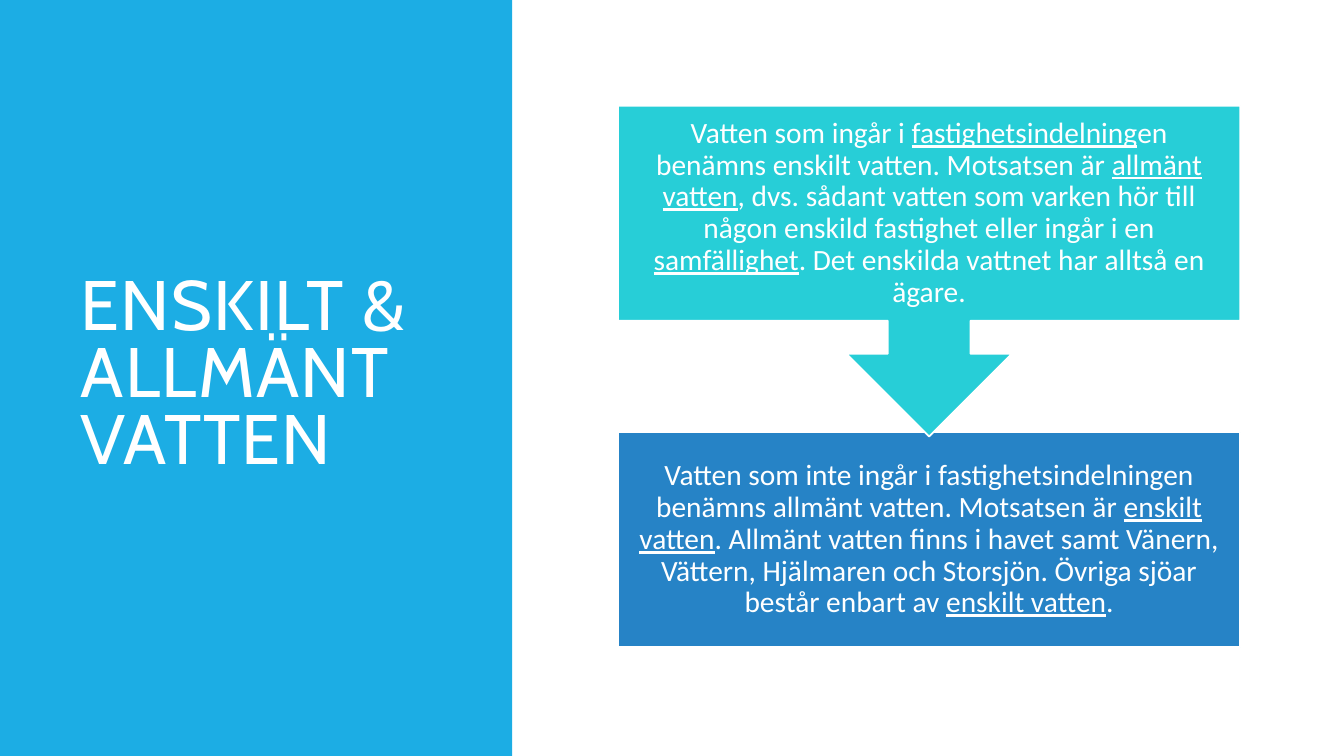
from dataclasses import dataclass

from pptx import Presentation
from pptx.dml.color import RGBColor
from pptx.enum.shapes import MSO_SHAPE
from pptx.enum.text import MSO_ANCHOR, MSO_AUTO_SIZE, PP_ALIGN
from pptx.oxml.ns import qn
from pptx.util import Inches, Pt

RECT = MSO_SHAPE.RECTANGLE
ARROW_CALLOUT = MSO_SHAPE.UP_ARROW_CALLOUT
MIDDLE = MSO_ANCHOR.MIDDLE
LEFT, CENTER = PP_ALIGN.LEFT, PP_ALIGN.CENTER
NO_AUTOFIT = MSO_AUTO_SIZE.NONE
TITLE_ONLY = 5


@dataclass(frozen=True)
class Theme:
    panel: str = "1CADE4"
    private: str = "27CED7"
    public: str = "2683C6"
    white: str = "FFFFFF"
    title_font: str = "Cabin"
    body_font: str = "Calibri"
    title_size: float = 50
    body_size: float = 21
    outline: float = 1.25


class SlideBuilder:
    def __init__(self, slide, theme):
        self.s = slide
        self.theme = theme

    def shape(self, kind, box, fill, outlined=True, rotation=0):
        sp = self.s.shapes.add_shape(kind, *map(Inches, box))
        sp.shadow.inherit = False
        sp.rotation = rotation
        sp.fill.solid()
        sp.fill.fore_color.rgb = RGBColor.from_string(fill)
        if outlined:
            sp.line.color.rgb = RGBColor.from_string(self.theme.white)
            sp.line.width = Pt(self.theme.outline)
        else:
            sp.line.fill.background()
        return sp

    def run(self, p, text, font, size, underline=False):
        r = p.add_run()
        r.text = text
        r.font.name = font
        r.font.size = Pt(size)
        r.font.color.rgb = RGBColor.from_string(self.theme.white)
        r.font.underline = underline

    def frame(self, sp, align, line_spacing):
        """Format the text frame and return its first paragraph."""
        tf = sp.text_frame
        tf.word_wrap = True
        tf.auto_size = NO_AUTOFIT
        tf.vertical_anchor = MIDDLE
        p = tf.paragraphs[0]
        p.alignment = align
        p.line_spacing = line_spacing
        return p

    def title(self, box, text):
        sp = self.s.shapes.title
        sp.left, sp.top, sp.width, sp.height = map(Inches, box)
        p = self.frame(sp, LEFT, 0.8)
        self.run(p, text, self.theme.title_font, self.theme.title_size)
        for r_pr in sp.element.iter(qn("a:rPr")):
            r_pr.set("spc", "100")
        return sp

    def text(self, box, runs, inset=0.16):
        """Add centred text; runs alternate between plain and underlined."""
        sp = self.s.shapes.add_textbox(*map(Inches, box))
        p = self.frame(sp, CENTER, 0.9)
        tf = sp.text_frame
        tf.margin_left = tf.margin_right = Inches(inset)
        tf.margin_top = tf.margin_bottom = Inches(inset)
        for i, text in enumerate(runs):
            self.run(p, text, self.theme.body_font, self.theme.body_size,
                     underline=i % 2 == 1)


PRIVATE_WATER = [
    "Vatten som ingår i ", "fastighetsindelning",
    "en benämns enskilt vatten. Motsatsen är ", "allmänt vatten",
    ", dvs. sådant vatten som varken hör till någon enskild fastighet "
    "eller ingår i en ", "samfällighet",
    ". Det enskilda vattnet har alltså en ägare.",
]
PUBLIC_WATER = [
    "Vatten som inte ingår i fastighetsindelningen benämns allmänt vatten. "
    "Motsatsen är ", "enskilt vatten",
    ". Allmänt vatten finns i havet samt Vänern, Vättern, Hjälmaren och "
    "Storsjön. Övriga sjöar består enbart av ", "enskilt vatten", ".",
]


def main():
    prs = Presentation()
    prs.slide_width, prs.slide_height = Inches(13.33), Inches(7.5)
    s = prs.slides.add_slide(prs.slide_layouts[TITLE_ONLY])
    theme = Theme()
    builder = SlideBuilder(s, theme)

    panel = builder.shape(RECT, (0, 0, 5.08, 7.5), theme.panel, outlined=False)
    title = builder.title((0.7, 0.7, 3.74, 6.09), "ENSKILT & ALLMÄNT VATTEN")
    title.element.addprevious(panel.element)  # panel goes behind the title

    left, width, height = 6.13, 6.17, 2.13
    private_top, public_top = 1.05, 4.29
    public_box = (left, public_top, width, height)
    builder.shape(RECT, public_box, theme.public)
    builder.text(public_box, PUBLIC_WATER)
    builder.shape(ARROW_CALLOUT, (left, private_top, width, 3.28),
                  theme.private, rotation=180)
    builder.text((left, private_top, width, height), PRIVATE_WATER)

    prs.save("out.pptx")


if __name__ == "__main__":
    main()
